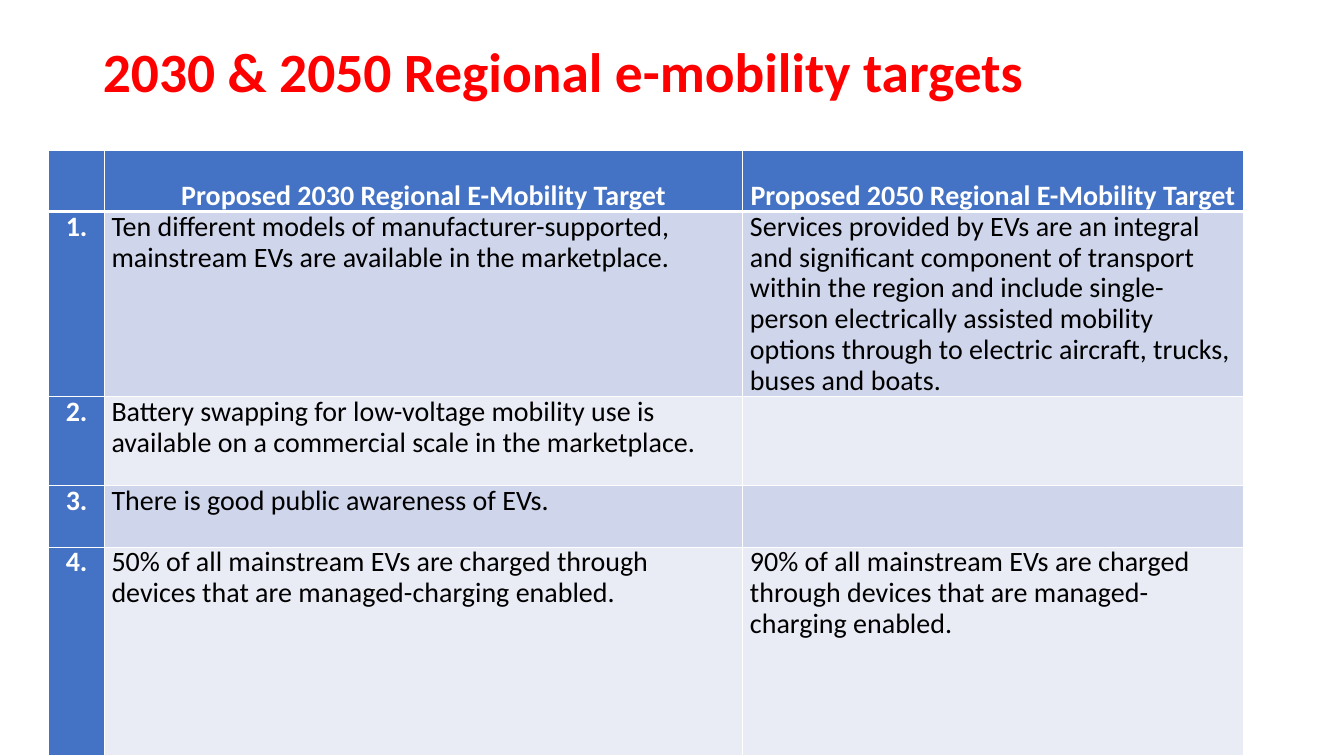
from lxml.etree import SubElement
from pptx import Presentation
from pptx.dml.color import RGBColor
from pptx.enum.text import MSO_ANCHOR, MSO_AUTO_SIZE, PP_ALIGN
from pptx.oxml.ns import qn
from pptx.util import Cm, Pt

FONT = "Calibri"
COLORS = {
    "title": "FF0000",
    "header": "4472C4",
    "band_dark": "CFD5EA",
    "band_light": "E9EBF5",
    "white": "FFFFFF",
    "text": "000000",
}
COL_WIDTHS = (1.4, 16.08, 12.6)
ROW_HEIGHTS = (1.55, 4.67, 2.24, 1.55, 5.26)
TARGETS = [
    ("", "Proposed 2030 Regional E-Mobility Target",
     "Proposed 2050 Regional E-Mobility Target"),
    ("1.", "Ten different models of manufacturer-supported, mainstream EVs are "
     "available in the marketplace.",
     "Services provided by EVs are an integral and significant component of "
     "transport within the region and include single-person electrically "
     "assisted mobility options through to electric aircraft, trucks, buses "
     "and boats."),
    ("2.", "Battery swapping for low-voltage mobility use is available on a "
     "commercial scale in the marketplace.", ""),
    ("3.", "There is good public awareness of EVs.", ""),
    ("4.", "50% of all mainstream EVs are charged through devices that are "
     "managed-charging enabled.",
     "90% of all mainstream EVs are charged through devices that are "
     "managed-charging enabled."),
]


def rgb(name):
    """Return the named colour."""
    return RGBColor.from_string(COLORS[name])


def format_text(p, size, color, bold, align):
    """Format a paragraph and its runs."""
    p.alignment = align
    p.line_spacing = 0.9
    for r in p.runs:
        r.font.name = FONT
        r.font.size = Pt(size)
        r.font.bold = bold
        r.font.color.rgb = rgb(color)


def add_borders(cell, top, bottom):
    """Give a cell white borders, with top and bottom widths in points."""
    tcPr = cell._tc.get_or_add_tcPr()
    for tag, width in (("a:lnL", 1), ("a:lnR", 1), ("a:lnT", top), ("a:lnB", bottom)):
        ln = SubElement(tcPr, qn(tag), w=str(Pt(width)))
        fill = SubElement(ln, qn("a:solidFill"))
        SubElement(fill, qn("a:srgbClr"), val=COLORS["white"])


def add_title(s, left, top, width, height):
    """Place the slide title in the given box."""
    sp = s.shapes.title
    sp.left, sp.top, sp.width, sp.height = left, top, width, height
    tf = sp.text_frame
    tf.text = "2030 & 2050 Regional e-mobility targets"
    tf.word_wrap = True
    tf.auto_size = MSO_AUTO_SIZE.NONE
    tf.vertical_anchor = MSO_ANCHOR.MIDDLE
    format_text(tf.paragraphs[0], 39.6, "title", True, PP_ALIGN.LEFT)


def fill_cell(cell, text, row, col):
    """Write and style one cell according to its row and column."""
    is_header, is_label = row == 0, row == 0 or col == 0
    add_borders(cell, 3 if row == 1 else 1, 3 if is_header else 1)
    band = "band_dark" if row % 2 else "band_light"
    cell.fill.solid()
    cell.fill.fore_color.rgb = rgb("header" if is_label else band)
    cell.margin_left = cell.margin_right = Cm(0.18)
    cell.margin_top = cell.margin_bottom = 0
    cell.vertical_anchor = MSO_ANCHOR.BOTTOM if is_header else MSO_ANCHOR.TOP
    cell.text_frame.text = text
    format_text(cell.text_frame.paragraphs[0], 20, "white" if is_label else "text",
                is_label, PP_ALIGN.CENTER if is_label else PP_ALIGN.LEFT)


def add_targets(s, left, top, width, height):
    """Place the table of targets in the given box."""
    table = s.shapes.add_table(len(TARGETS), len(COL_WIDTHS),
                               left, top, width, height).table
    for column, share in zip(table.columns, COL_WIDTHS):
        column.width = int(width * share / sum(COL_WIDTHS))
    for row, share in zip(table.rows, ROW_HEIGHTS):
        row.height = int(height * share / sum(ROW_HEIGHTS))
    for i, texts in enumerate(TARGETS):
        for j, text in enumerate(texts):
            fill_cell(table.cell(i, j), text, i, j)


def main():
    """Build the slide and save it."""
    prs = Presentation()
    prs.slide_width, prs.slide_height = Cm(33.87), Cm(19.05)
    s = prs.slides.add_slide(prs.slide_layouts[5])
    add_title(s, Cm(2.34), Cm(1.02), Cm(29.21), Cm(1.73))
    add_targets(s, Cm(1.23), Cm(3.78), Cm(30.1), Cm(15.27))
    prs.save("out.pptx")


if __name__ == "__main__":
    main()
